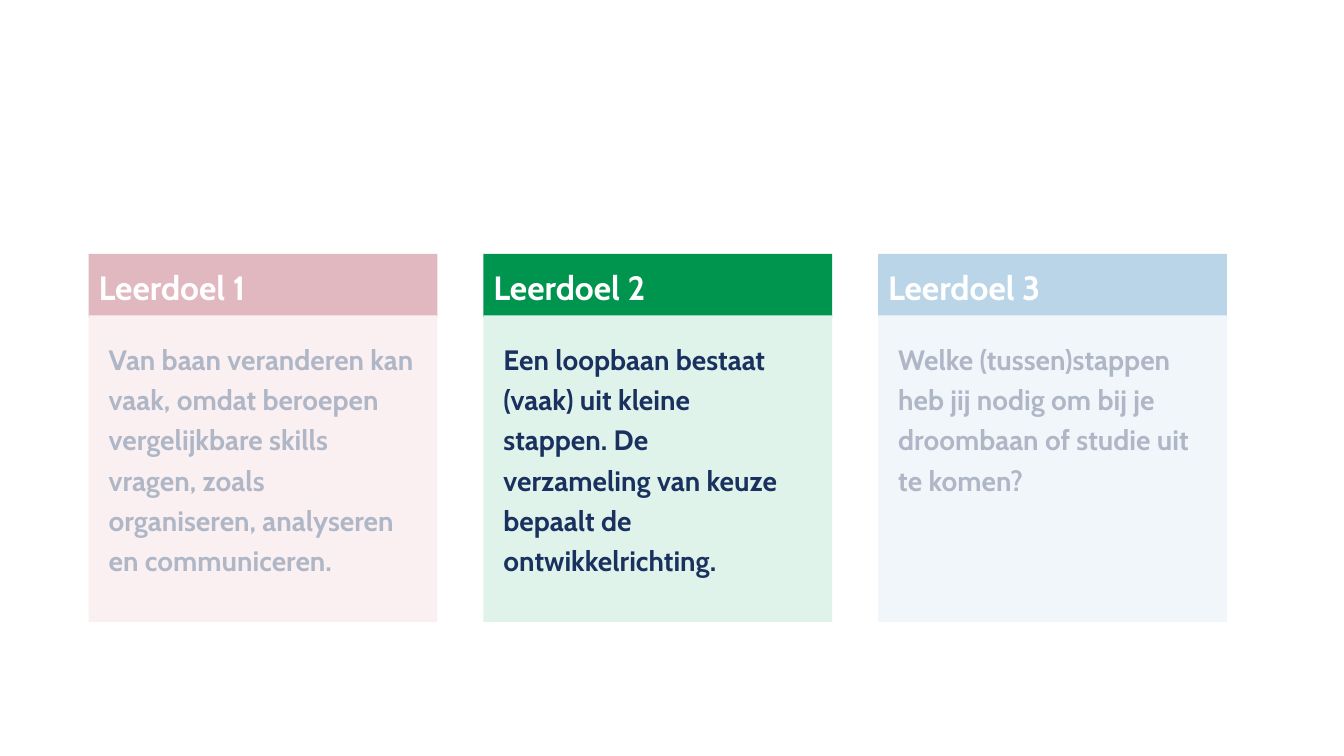
from lxml.etree import SubElement
from pptx import Presentation
from pptx.dml.color import RGBColor
from pptx.enum.shapes import MSO_SHAPE
from pptx.oxml.ns import qn
from pptx.util import Inches, Pt

LEFT, PITCH, CARD_W = 0.88, 3.915, 3.46
HEAD_TOP, HEAD_H = 2.52, 0.63
BODY_TOP, BODY_H = 3.13, 3.04
VEIL_W, VEIL_H, VEIL_OPACITY = 3.65, 5.17, 65
WHITE, NAVY = "FFFFFF", "1A315F"

GOALS = [
    ("Leerdoel 1", "AA334D", "F2D3D9", 3.27,
     "Van baan veranderen kan vaak, omdat beroepen vergelijkbare skills "
     "vragen, zoals organiseren, analyseren en communiceren."),
    ("Leerdoel 2", "00954F", "DFF3EB", 3.11,
     "Een loopbaan bestaat (vaak) uit kleine stappen. De verzameling van "
     "keuze bepaalt de ontwikkelrichting."),
    ("Leerdoel 3", "3C89BE", "D7E7F3", 3.27,
     "Welke (tussen)stappen heb jij nodig om bij je droombaan of studie "
     "uit te komen?"),
]
VEILS = [(0.83, 1.64), (8.61, 1.17)]


def rgb(value):
    """Turn a hex string into a colour."""
    return RGBColor.from_string(value)


def add_box(s, x, y, w, h, color, opacity=100):
    """Draw a plain rectangle, see-through below 100 percent opacity."""
    sp = s.shapes.add_shape(MSO_SHAPE.RECTANGLE, Inches(x), Inches(y),
                            Inches(w), Inches(h))
    sp.shadow.inherit = False
    sp.line.fill.background()
    sp.fill.solid()
    sp.fill.fore_color.rgb = rgb(color)
    if opacity < 100:
        clr = sp._element.spPr.find(qn("a:solidFill")).find(qn("a:srgbClr"))
        SubElement(clr, qn("a:alpha"), val=str(opacity * 1000))


def add_text(s, text, x, y, w, h, size=20, color=NAVY, font="Cabin", bold=True):
    """Place one wrapped paragraph in a text box."""
    tf = s.shapes.add_textbox(Inches(x), Inches(y), Inches(w), Inches(h)).text_frame
    tf.word_wrap = True
    p = tf.paragraphs[0]
    p.line_spacing = 1.2
    r = p.add_run()
    r.text = text
    r.font.name, r.font.size, r.font.bold = font, Pt(size), bold
    r.font.color.rgb = rgb(color)


def add_card(s, x, heading, dark, light, text_w, text):
    """Draw one learning goal with its heading bar and body."""
    add_box(s, x, HEAD_TOP, CARD_W, HEAD_H, dark)
    add_box(s, x, BODY_TOP, CARD_W, BODY_H, light)
    add_text(s, heading, x, HEAD_TOP, CARD_W, 0.61, size=24, color=WHITE)
    add_text(s, text, x + 0.1, BODY_TOP + 0.15, text_w, BODY_H - 0.15)


def main():
    """Build the slide and save it."""
    prs = Presentation()
    prs.slide_width, prs.slide_height = Inches(13.33), Inches(7.5)
    s = prs.slides.add_slide(prs.slide_layouts[6])
    for i, goal in enumerate(GOALS):
        add_card(s, LEFT + i * PITCH, *goal)
    for x, y in VEILS:
        add_box(s, x, y, VEIL_W, VEIL_H, WHITE, opacity=VEIL_OPACITY)
    prs.save("out.pptx")


if __name__ == "__main__":
    main()
